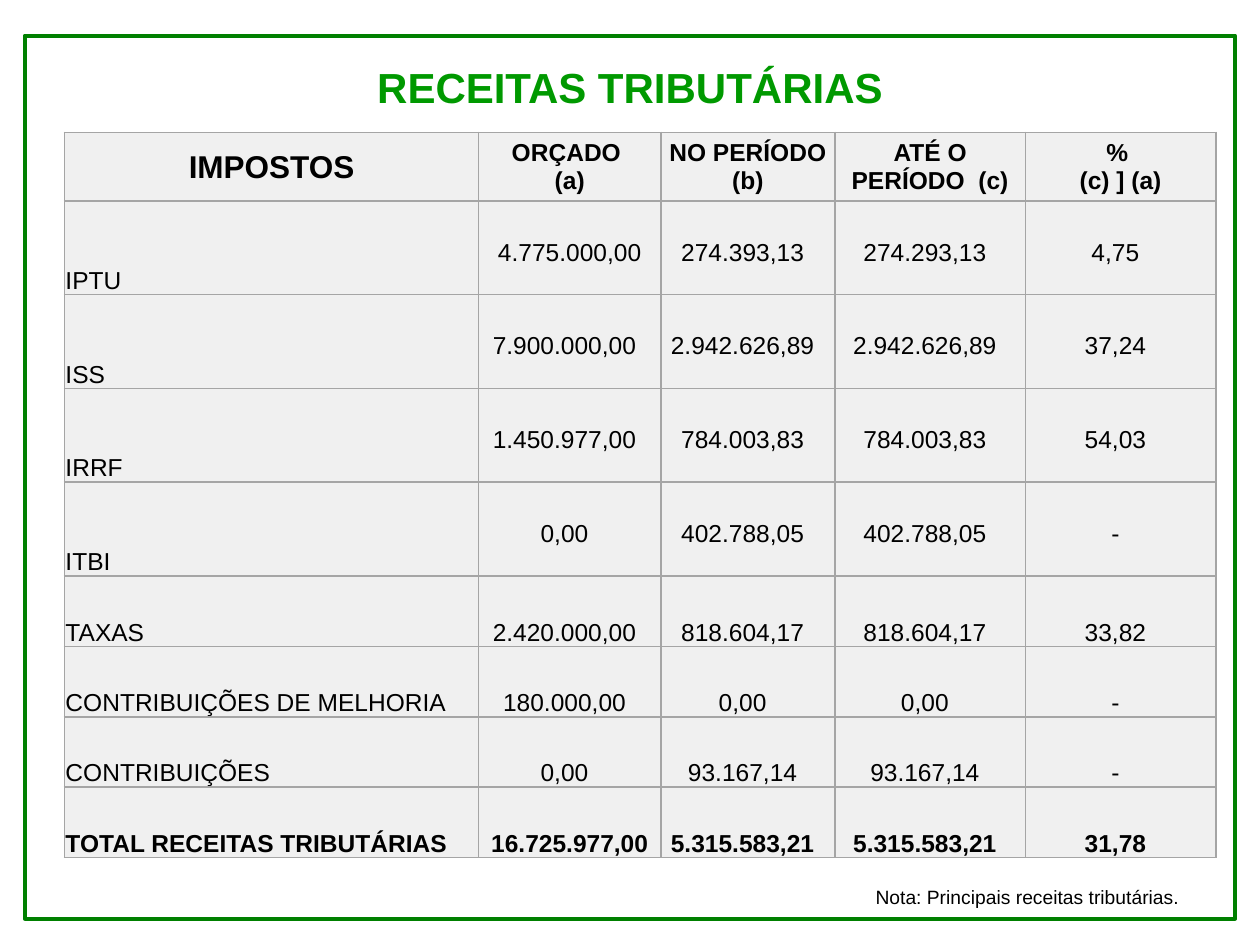
import pptx
import pptx.dml.color
import pptx.enum.shapes
import pptx.enum.text
import pptx.oxml
import pptx.oxml.ns
import pptx.util
from pptx.util import Cm

ALIGN = pptx.enum.text.PP_ALIGN
ANCHOR = pptx.enum.text.MSO_ANCHOR

COLUMN_WIDTHS = [8.35, 3.67, 3.51, 3.84, 3.84]
HEADER_HEIGHT, TAX_HEIGHT, OTHER_HEIGHT = 1.38, 1.89, 1.42
TAX_ROWS = range(1, 5)
HEADINGS = ["IMPOSTOS", "ORÇADO \n(a)", "NO PERÍODO\n(b)",
            "ATÉ O PERÍODO  (c)", "% \n(c) ] (a)"]
REVENUES = [
    ["IPTU", "4.775.000,00", "274.393,13", "274.293,13", "4,75"],
    ["ISS", "7.900.000,00", "2.942.626,89", "2.942.626,89", "37,24"],
    ["IRRF", "1.450.977,00", "784.003,83", "784.003,83", "54,03"],
    ["ITBI", "0,00", "402.788,05", "402.788,05", "-"],
    ["TAXAS", "2.420.000,00", "818.604,17", "818.604,17", "33,82"],
    ["CONTRIBUIÇÕES DE MELHORIA", "180.000,00", "0,00", "0,00", "-"],
    ["CONTRIBUIÇÕES", "0,00", "93.167,14", "93.167,14", "-"],
    ["TOTAL RECEITAS TRIBUTÁRIAS", "16.725.977,00", "5.315.583,21",
     "5.315.583,21", "31,78"],
]
TOTAL_ROW = len(REVENUES)


def color(hex_string):
    return pptx.dml.color.RGBColor.from_string(hex_string)


def set_attributes(target, values):
    for name, value in values.items():
        setattr(target, name, value)


def write_text(text_frame, text, size, hex_color="000000", bold=False,
               alignment=ALIGN.LEFT):
    """Fill a text frame, one paragraph per line, in a single format."""
    text_frame.text = text
    font_format = {"name": "Arial", "size": pptx.util.Pt(size), "bold": bold}
    for paragraph in text_frame.paragraphs:
        paragraph.alignment = alignment
        for run in paragraph.runs:
            set_attributes(run.font, font_format)
            run.font.color.rgb = color(hex_color)


def add_text(slide, left, top, width, height, text, size, **text_format):
    shape = slide.shapes.add_textbox(Cm(left), Cm(top), Cm(width), Cm(height))
    shape.text_frame.word_wrap = True
    write_text(shape.text_frame, text, size, **text_format)


def add_frame(slide, left, top, width, height):
    shape = slide.shapes.add_shape(
        pptx.enum.shapes.MSO_SHAPE.RECTANGLE,
        Cm(left), Cm(top), Cm(width), Cm(height))
    shape.shadow.inherit = False
    shape.fill.background()
    shape.line.color.rgb = color("008000")
    shape.line.width = pptx.util.Pt(2.25)


def add_borders(cell, hex_color, width):
    properties = cell._tc.get_or_add_tcPr()
    namespace = pptx.oxml.ns.nsdecls("a")
    for side in ("lnL", "lnR", "lnT", "lnB"):
        properties.append(pptx.oxml.parse_xml(
            f'<a:{side} {namespace} w="{pptx.util.Pt(width)}"><a:solidFill>'
            f'<a:srgbClr val="{hex_color}"/></a:solidFill></a:{side}>'))


def cell_layout(row, column):
    """Anchor and margins; amounts of the four taxes sit one line higher."""
    heading = row == 0
    raised = row in TAX_ROWS and column > 0
    narrow = heading or (row, column) in ((1, 1), (TOTAL_ROW, 1))
    return {
        "vertical_anchor": ANCHOR.MIDDLE if heading else ANCHOR.BOTTOM,
        "margin_left": Cm(0.02),
        "margin_top": Cm(0.02),
        "margin_right": Cm(0.02 if narrow else 0.23),
        "margin_bottom": Cm(0.57 if raised else 0),
    }


def add_revenue_table(slide, left, top):
    rows = [HEADINGS] + REVENUES
    heights = [HEADER_HEIGHT] + [
        TAX_HEIGHT if row in TAX_ROWS else OTHER_HEIGHT
        for row in range(1, len(rows))]
    table = slide.shapes.add_table(
        len(rows), len(COLUMN_WIDTHS), Cm(left), Cm(top),
        Cm(sum(COLUMN_WIDTHS)), Cm(sum(heights))).table
    set_attributes(table, {"first_row": False, "horz_banding": False})
    for column, width in zip(table.columns, COLUMN_WIDTHS):
        column.width = Cm(width)
    for row, height in zip(table.rows, heights):
        row.height = Cm(height)

    for row, texts in enumerate(rows):
        for column, text in enumerate(texts):
            cell = table.cell(row, column)
            set_attributes(cell, cell_layout(row, column))
            label = row > 0 and column == 0
            write_text(cell.text_frame, text,
                       size=18 if (row, column) == (0, 0) else 14,
                       bold=row in (0, TOTAL_ROW),
                       alignment=ALIGN.LEFT if label else ALIGN.CENTER)
            add_borders(cell, "A5A5A5", 1)
            cell.fill.solid()
            cell.fill.fore_color.rgb = color("F0F0F0")


def main():
    presentation = pptx.Presentation()
    set_attributes(presentation, {"slide_width": Cm(25.4),
                                  "slide_height": Cm(19.05)})
    slide = presentation.slides.add_slide(presentation.slide_layouts[6])
    add_text(slide, 2.4, 1.12, 20.6, 1.28, "RECEITAS TRIBUTÁRIAS", 24,
             hex_color="009900", bold=True, alignment=ALIGN.CENTER)
    add_revenue_table(slide, 1.3, 2.67)
    add_frame(slide, 0.5, 0.72, 24.4, 17.8)
    add_text(slide, 17.4, 17.73, 8, 0.73,
             "Nota: Principais receitas tributárias.", 11)
    presentation.save("out.pptx")


if __name__ == "__main__":
    main()
